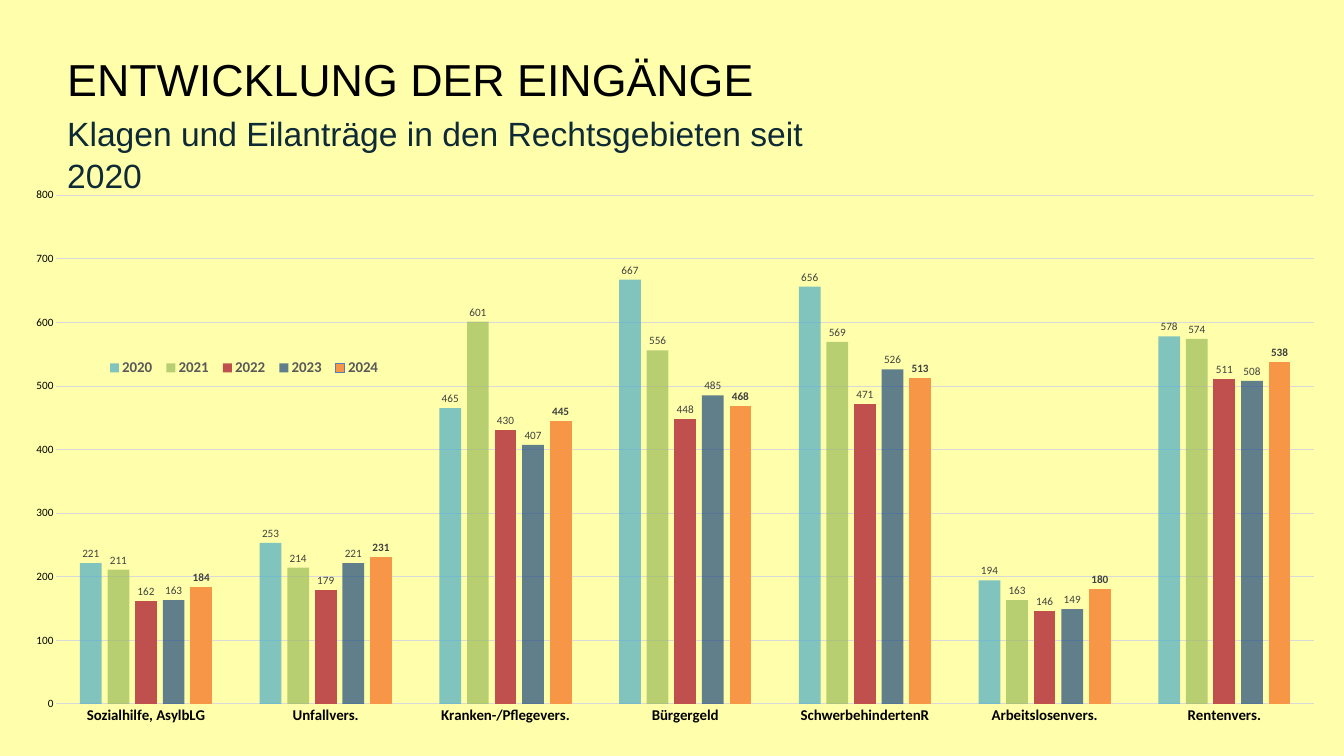
from lxml import etree
from pptx import Presentation
from pptx import util as u
from pptx.chart.data import CategoryChartData
from pptx.dml.color import RGBColor
from pptx.enum import chart as ch, text
from pptx.oxml.ns import qn

YELLOW = RGBColor(0xFF, 0xFF, 0xAB)
BLACK = RGBColor(0, 0, 0)
NAVY = RGBColor(0x0F, 0x2A, 0x37)
GRID = RGBColor(0xD9, 0xD9, 0xD9)
LEGEND = RGBColor(0x59, 0x59, 0x59)
LABEL = RGBColor(0x40, 0x40, 0x40)
BLUE = RGBColor(0x4F, 0x81, 0xBD)
TEAL = RGBColor(0x4B, 0xAC, 0xC6)
GREEN = RGBColor(0x9B, 0xBB, 0x59)
RED = RGBColor(0xC0, 0x50, 0x4D)
DARK_BLUE = RGBColor(0x1F, 0x49, 0x7D)
ORANGE = RGBColor(0xF7, 0x96, 0x46)

AREAS = ["Sozialhilfe, AsylbLG", "Unfallvers.", "Kranken-/Pflegevers.", "Bürgergeld",
         "SchwerbehindertenR", "Arbeitslosenvers.", "Rentenvers."]
# year, colour, opacity in percent, cases per area
YEARS = [
    ("2020", TEAL, 70, (221, 253, 465, 667, 656, 194, 578)),
    ("2021", GREEN, 70, (211, 214, 601, 556, 569, 163, 574)),
    ("2022", RED, 100, (162, 179, 430, 448, 471, 146, 511)),
    ("2023", DARK_BLUE, 70, (163, 221, 407, 485, 526, 149, 508)),
    ("2024", ORANGE, 100, (184, 231, 445, 468, 513, 180, 538)),
]


def set_font(font, size, color, name="Calibri", bold=False):
    font.size, font.name, font.bold = u.Pt(size), name, bold
    font.color.rgb = color


def write(tf, content, leading, **fmt):
    """Put one paragraph with a fixed line height into a text frame."""
    p = tf.paragraphs[0]
    p.line_spacing = u.Pt(leading)
    r = p.add_run()
    r.text = content
    set_font(r.font, **fmt)


def set_layout(parent, index, x, y, w, h, inner=False):
    """Place a chart part by fractions of the chart area."""
    for old in parent.findall(qn("c:layout")):
        parent.remove(old)
    layout = etree.Element(qn("c:layout"))
    manual = etree.SubElement(layout, qn("c:manualLayout"))
    values = [("layoutTarget", "inner")] if inner else []
    values += [("xMode", "edge"), ("yMode", "edge"), ("x", x), ("y", y), ("w", w), ("h", h)]
    for tag, value in values:
        etree.SubElement(manual, qn("c:" + tag)).set("val", str(value))
    parent.insert(index, layout)


class SlideBuilder:
    def __init__(self, prs):
        self.s = prs.slides.add_slide(prs.slide_layouts[6])
        fill = self.s.background.fill
        fill.solid()
        fill.fore_color.rgb = YELLOW

    def text(self, content, x, y, w, h, leading, **fmt):
        sp = self.s.shapes.add_textbox(u.Cm(x), u.Cm(y), u.Cm(w), u.Cm(h))
        tf = sp.text_frame
        tf.margin_left = tf.margin_right = tf.margin_top = tf.margin_bottom = 0
        tf.word_wrap = True
        tf.auto_size = text.MSO_AUTO_SIZE.SHAPE_TO_FIT_TEXT
        write(tf, content, leading, name="Arial", **fmt)

    def column_chart(self, x, y, w, h):
        data = CategoryChartData()
        data.categories = AREAS
        for year, _, _, cases in YEARS:
            data.add_series(year, cases)
        chart = self.s.shapes.add_chart(ch.XL_CHART_TYPE.COLUMN_CLUSTERED,
                                        u.Cm(x), u.Cm(y), u.Cm(w), u.Cm(h), data).chart
        set_font(chart.font, 10, BLACK)
        chart.has_title = False
        plot = chart.plots[0]
        plot.vary_by_categories = False
        plot.gap_width, plot.overlap = 219, -27
        for ser, (_, color, opacity, _) in zip(plot.series, YEARS):
            self.style_series(ser, color, opacity)
        self.style_last_year(plot.series[-1])
        self.style_axes(chart)

        chart.has_legend = True
        legend = chart.legend
        legend.position = ch.XL_LEGEND_POSITION.BOTTOM
        legend.include_in_layout = False
        set_font(legend.font, 16, LEGEND, bold=True)
        set_layout(legend._element, 1, 0.06, 0.36, 0.22, 0.04)
        plot_area = chart._chartSpace.find(".//" + qn("c:plotArea"))
        set_layout(plot_area, 0, 0.026, 0.093, 0.964, 0.845, inner=True)

    def style_series(self, ser, color, opacity):
        ser.format.fill.solid()
        ser.format.fill.fore_color.rgb = color
        if opacity < 100:
            clr = ser._element.find(".//" + qn("a:srgbClr"))
            etree.SubElement(clr, qn("a:alpha")).set("val", str(opacity * 1000))
        labels = ser.data_labels
        labels.show_value = True
        labels.position = ch.XL_LABEL_POSITION.OUTSIDE_END
        set_font(labels.font, 12, LABEL)

    def style_last_year(self, ser):
        """Bold labels, and an outline that shows in the legend only."""
        ser.data_labels.font.bold = True
        ser.format.line.color.rgb = BLUE
        ser.format.line.width = u.Pt(0.75)
        for i in range(len(AREAS)):
            fmt = ser.points[i].format
            fmt.fill.solid()
            fmt.fill.fore_color.rgb = ORANGE
            fmt.line.fill.background()

    def style_axes(self, chart):
        cat, val = chart.category_axis, chart.value_axis
        for axis, size, bold in ((cat, 16, True), (val, 12, False)):
            axis.major_tick_mark = axis.minor_tick_mark = ch.XL_TICK_MARK.NONE
            set_font(axis.tick_labels.font, size, BLACK, bold=bold)
        val.minimum_scale, val.maximum_scale, val.major_unit = 0, 800, 100
        val.has_major_gridlines = True
        val.format.line.fill.background()
        for line in (cat.format.line, val.major_gridlines.format.line):
            line.color.rgb = GRID
            line.width = u.Pt(0.75)


def main():
    prs = Presentation()
    prs.slide_width, prs.slide_height = u.Cm(50.8), u.Cm(28.58)
    b = SlideBuilder(prs)
    b.text("Klagen und Eilanträge in den Rechtsgebieten seit 2020",
           2.54, 4.17, 30.05, 1.55, leading=45.5, size=36, color=NAVY)
    b.text("ENTWICKLUNG DER EINGÄNGE",
           2.54, 0.94, 29.13, 2.77, leading=86.4, size=48, color=BLACK)
    b.column_chart(0.84, 5.26, 49.33, 22.76)
    prs.save("out.pptx")


if __name__ == "__main__":
    main()
